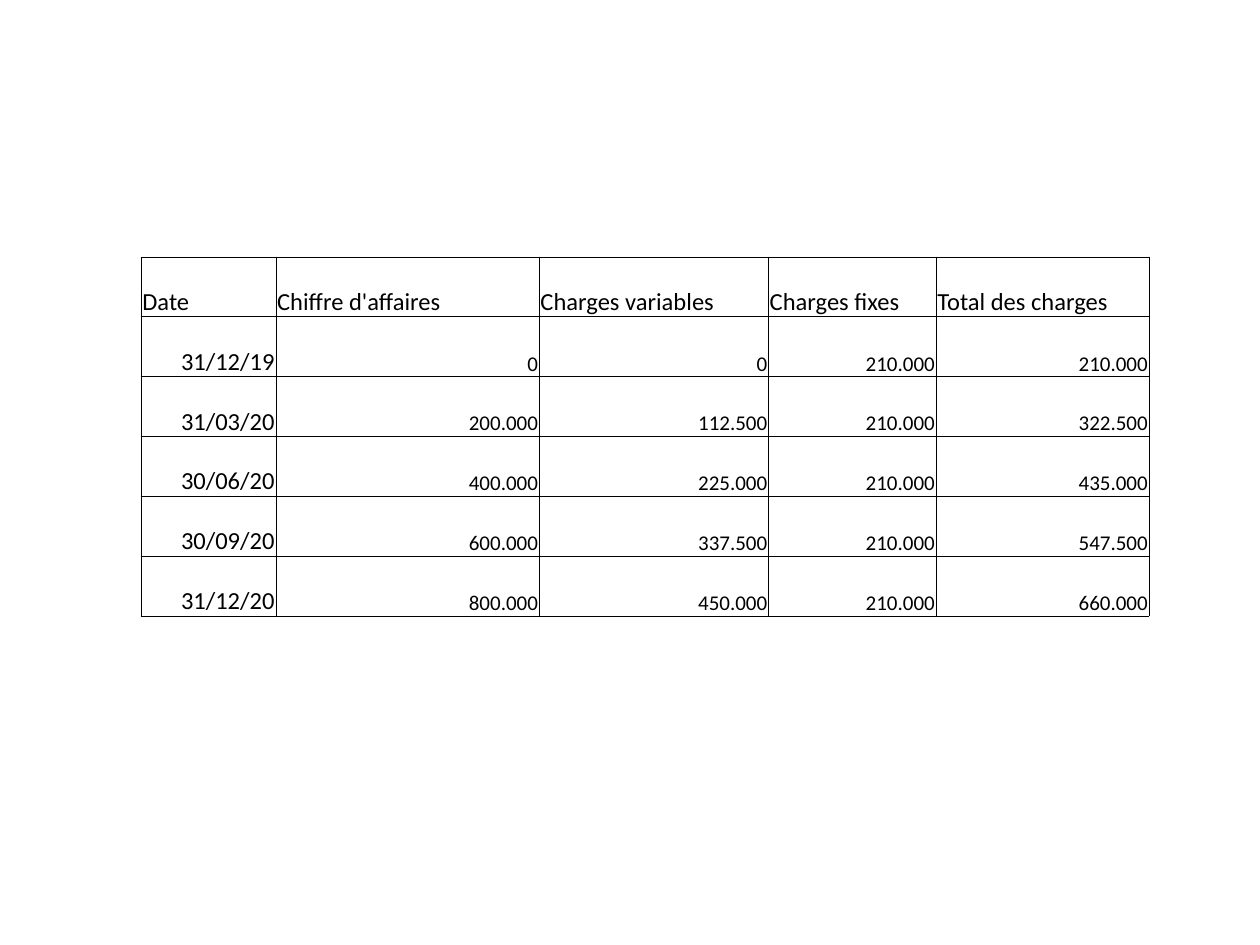
from lxml import etree
from pptx import Presentation
from pptx.dml.color import RGBColor
from pptx.enum.text import MSO_ANCHOR, PP_ALIGN
from pptx.oxml.ns import qn
from pptx.util import Inches, Pt

BLACK = RGBColor(0x00, 0x00, 0x00)
BOTTOM = MSO_ANCHOR.BOTTOM
LEFT, RIGHT = PP_ALIGN.LEFT, PP_ALIGN.RIGHT

HEADINGS = ["Date", "Chiffre d'affaires", "Charges variables",
            "Charges fixes", "Total des charges"]
QUARTERS = [
    ["31/12/19", "0", "0", "210.000", "210.000"],
    ["31/03/20", "200.000", "112.500", "210.000", "322.500"],
    ["30/06/20", "400.000", "225.000", "210.000", "435.000"],
    ["30/09/20", "600.000", "337.500", "210.000", "547.500"],
    ["31/12/20", "800.000", "450.000", "210.000", "660.000"],
]
COLUMN_WIDTHS = [1.07, 2.09, 1.82, 1.33, 1.69]


def add_borders(cell, color, width):
    properties = cell._tc.get_or_add_tcPr()
    for side in ("lnL", "lnR", "lnT", "lnB"):
        line = etree.SubElement(properties, qn(f"a:{side}"), w=str(width))
        fill = etree.SubElement(line, qn("a:solidFill"))
        etree.SubElement(fill, qn("a:srgbClr"), val=str(color))


prs = Presentation()
prs.slide_width, prs.slide_height = Inches(10), Inches(7.5)
slide = prs.slides.add_slide(prs.slide_layouts[6])

rows = [HEADINGS] + QUARTERS
charges = slide.shapes.add_table(
    len(rows), len(HEADINGS), Inches(1.12), Inches(2.04), Inches(8), Inches(2.85)
).table
charges.first_row = False
charges.horz_banding = False
for column, width in zip(charges.columns, COLUMN_WIDTHS):
    column.width = Inches(width)

for r, row in enumerate(rows):
    for c, entry in enumerate(row):
        cell = charges.cell(r, c)
        add_borders(cell, BLACK, Pt(0.5))
        cell.fill.background()
        cell.vertical_anchor = BOTTOM
        cell.margin_left = cell.margin_top = cell.margin_right = Inches(0.01)
        cell.margin_bottom = 0
        cell.text = entry
        paragraph = cell.text_frame.paragraphs[0]
        paragraph.alignment = LEFT if r == 0 else RIGHT
        paragraph.font.name = "Calibri"
        paragraph.font.size = Pt(14 if r == 0 or c == 0 else 12)
        paragraph.font.color.rgb = BLACK

prs.save("out.pptx")
